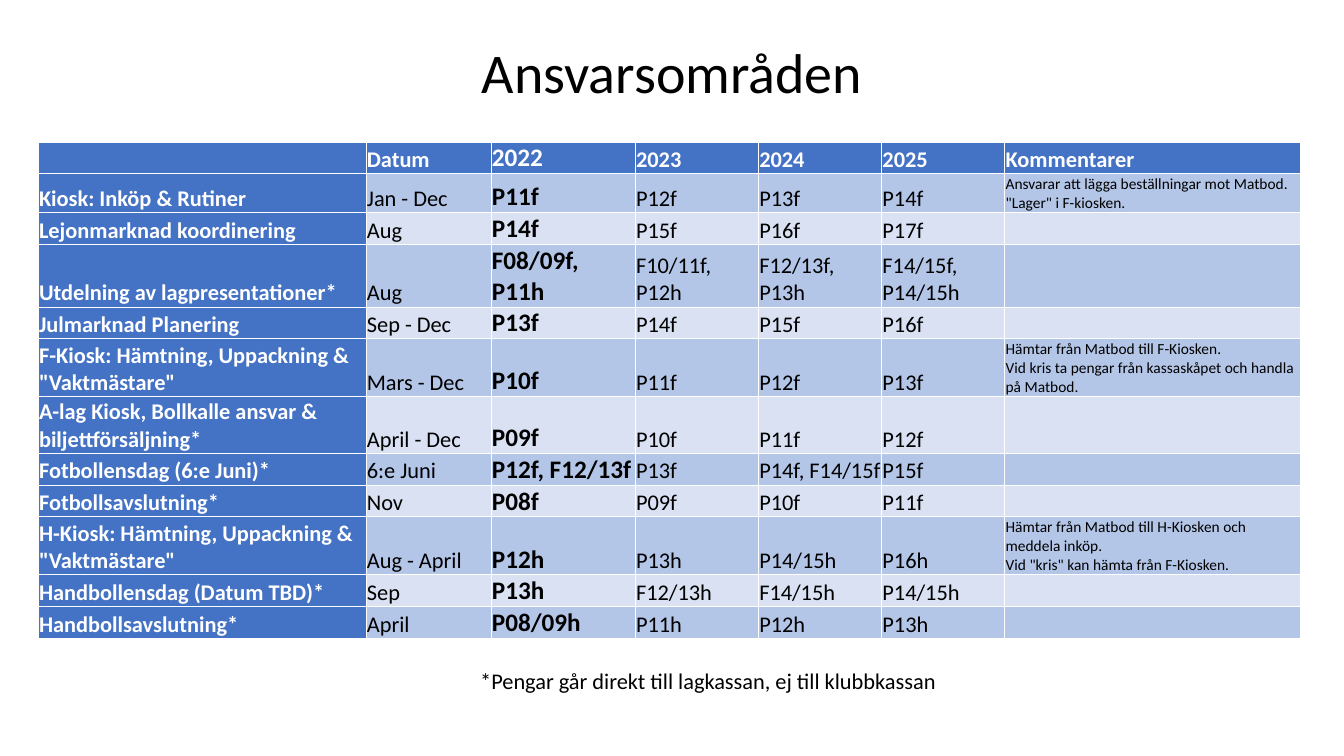
from lxml import etree
from pptx import Presentation
from pptx.dml.color import RGBColor
from pptx.enum.text import MSO_ANCHOR, MSO_AUTO_SIZE, PP_ALIGN
from pptx.oxml.ns import qn
from pptx.util import Pt

MIDDLE = MSO_ANCHOR.MIDDLE
BOTTOM = MSO_ANCHOR.BOTTOM
CENTER = PP_ALIGN.CENTER
NO_FIT = MSO_AUTO_SIZE.NONE
WHITE, BLACK, BLUE = "FFFFFF", "000000", "4472C4"
BANDS = ["D9E1F2", "B4C6E7"]


def paint(color, value):
    color.rgb = RGBColor.from_string(value)


def write(para, text, size, color=BLACK, bold=False):
    for i, line in enumerate(text.split("\n")):
        if i:
            para.add_line_break()
        run = para.add_run()
        run.text = line
        run.font.name = "Calibri"
        run.font.size = Pt(size)
        run.font.bold = bold
        paint(run.font.color, color)


deck = Presentation()
deck.slide_width, deck.slide_height = Pt(960), Pt(540)
slide = deck.slides.add_slide(deck.slide_layouts[5])

title = slide.shapes.title
title.left, title.top, title.width, title.height = Pt(79.2), Pt(13.7), Pt(801.4), Pt(80.1)
note = slide.shapes.add_textbox(Pt(105.1), Pt(457.2), Pt(801.4), Pt(60.5))
for shape, text, size, gap in [
    (title, "Ansvarsområden", 40, 0),
    (note, "*Pengar går direkt till lagkassan, ej till klubbkassan", 16, 10),
]:
    frame = shape.text_frame
    frame.word_wrap = True
    frame.auto_size = NO_FIT
    frame.vertical_anchor = MIDDLE
    para = frame.paragraphs[0]
    para.alignment = CENTER
    para.line_spacing = 0.9
    para.space_before = Pt(gap)
    write(para, text, size)

rows = [
    ["", "Datum", "2022", "2023", "2024", "2025", "Kommentarer"],
    ["Kiosk: Inköp & Rutiner", "Jan - Dec", "P11f", "P12f", "P13f", "P14f",
     "Ansvarar att lägga beställningar mot Matbod. \"Lager\" i F-kiosken."],
    ["Lejonmarknad koordinering", "Aug", "P14f", "P15f", "P16f", "P17f", ""],
    ["Utdelning av lagpresentationer*", "Aug", "F08/09f, P11h", "F10/11f, P12h",
     "F12/13f, P13h", "F14/15f, P14/15h", ""],
    ["Julmarknad Planering", "Sep - Dec", "P13f", "P14f", "P15f", "P16f", ""],
    ["F-Kiosk: Hämtning, Uppackning & \"Vaktmästare\"", "Mars - Dec",
     "P10f", "P11f", "P12f", "P13f",
     "Hämtar från Matbod till F-Kiosken.\n"
     "Vid kris ta pengar från kassaskåpet och handla på Matbod."],
    ["A-lag Kiosk, Bollkalle ansvar & biljettförsäljning*", "April - Dec",
     "P09f", "P10f", "P11f", "P12f", ""],
    ["Fotbollensdag (6:e Juni)*", "6:e Juni", "P12f, F12/13f", "P13f",
     "P14f, F14/15f", "P15f", ""],
    ["Fotbollsavslutning*", "Nov", "P08f", "P09f", "P10f", "P11f", ""],
    ["H-Kiosk: Hämtning, Uppackning & \"Vaktmästare\"", "Aug - April",
     "P12h", "P13h", "P14/15h", "P16h",
     "Hämtar från Matbod till H-Kiosken och meddela inköp.\n"
     "Vid \"kris\" kan hämta från F-Kiosken."],
    ["Handbollensdag (Datum TBD)*", "Sep", "P13h", "F12/13h", "F14/15h", "P14/15h", ""],
    ["Handbollsavslutning*", "April", "P08/09h", "P11h", "P12h", "P13h", ""],
]
widths = [234.2, 89.3, 103, 88, 88, 88, 211]
heights = [22.5, 27.5, 22.5, 44, 22.5, 40.7, 40.4, 22.5, 22.5, 41, 22.5, 22.5]

table = slide.shapes.add_table(
    len(rows), len(widths), Pt(27.2), Pt(101.4), Pt(sum(widths)), Pt(sum(heights))
).table
for col, width in zip(table.columns, widths):
    col.width = Pt(width)
for row, height in zip(table.rows, heights):
    row.height = Pt(height)

for r, row in enumerate(rows):
    for c, text in enumerate(row):
        cell = table.cell(r, c)
        cell.vertical_anchor = BOTTOM
        cell.margin_left = cell.margin_right = cell.margin_top = Pt(0.7)
        cell.margin_bottom = Pt(0)
        props = cell._tc.get_or_add_tcPr()
        for side in ["lnL", "lnR", "lnT", "lnB"]:
            line = etree.SubElement(props, qn("a:" + side), w=str(Pt(0.5)))
            fill = etree.SubElement(line, qn("a:solidFill"))
            etree.SubElement(fill, qn("a:srgbClr"), val=WHITE)
        head = r == 0 or c == 0
        cell.fill.solid()
        paint(cell.fill.fore_color, BLUE if head else BANDS[r % 2])
        if text:
            size = 18 if c == 2 else 11 if c == 6 and r else 16
            write(cell.text_frame.paragraphs[0], text, size,
                  WHITE if head else BLACK, head or c == 2)

deck.save("out.pptx")
